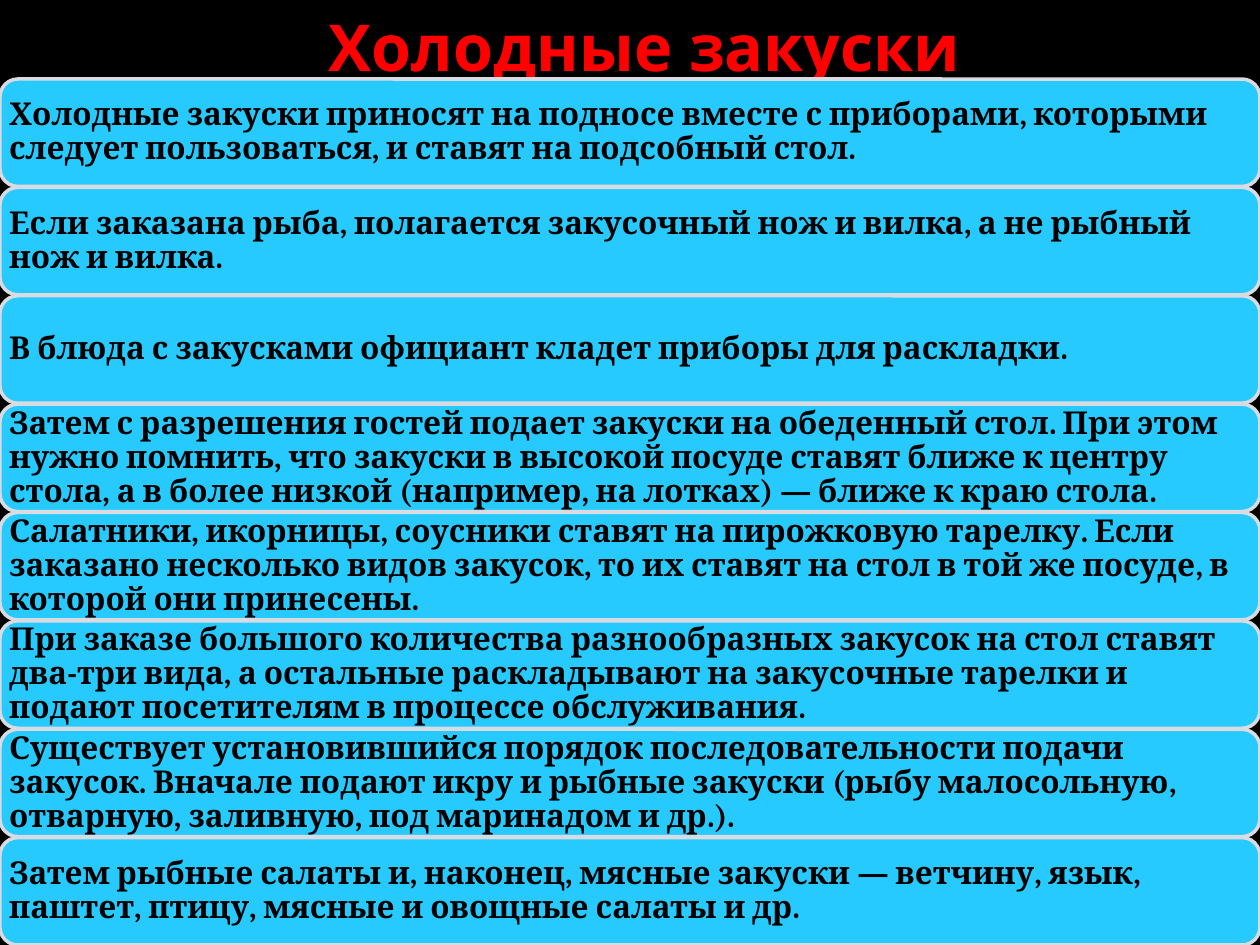
from pptx import Presentation
from pptx.dml.color import RGBColor
from pptx.enum.shapes import MSO_SHAPE as Shape
from pptx.enum.text import MSO_ANCHOR as Anchor, PP_ALIGN as Align
from pptx.util import Emu, Pt

SCALE = 914400 / 126
WIDTH, HEIGHT = 1260, 945
COLORS = {"back": "000000", "title": "FF0000", "row": "26CAFE",
          "edge": "D8DBE2", "text": "000000"}
RULES = [
    "Холодные закуски приносят на подносе вместе с приборами, которыми следует "
    "пользоваться, и ставят на подсобный стол.",
    "Если заказана рыба, полагается закусочный нож и вилка, а не рыбный нож и вилка.",
    "В блюда с закусками официант кладет приборы для раскладки.",
    "Затем с разрешения гостей подает закуски на обеденный стол. При этом нужно "
    "помнить, что закуски в высокой посуде ставят ближе к центру стола, а в более "
    "низкой (например, на лотках) — ближе к краю стола.",
    "Салатники, икорницы, соусники ставят на пирожковую тарелку. Если заказано "
    "несколько видов закусок, то их ставят на стол в той же посуде, в которой они "
    "принесены.",
    "При заказе большого количества разнообразных закусок на стол ставят два-три "
    "вида, а остальные раскладывают на закусочные тарелки и подают посетителям в "
    "процессе обслуживания.",
    "Существует установившийся порядок последовательности подачи закусок. Вначале "
    "подают икру и рыбные закуски (рыбу малосольную, отварную, заливную, под "
    "маринадом и др.).",
    "Затем рыбные салаты и, наконец, мясные закуски — ветчину, язык, паштет, птицу, "
    "мясные и овощные салаты и др.",
]


def px(length):
    """Turn pixels into EMU."""
    return Emu(round(length * SCALE))


def color(name):
    """Look up a named colour."""
    return RGBColor.from_string(COLORS[name])


def write(box, text, font, size, ink, align, inset):
    """Put one bold, vertically centred paragraph into a box."""
    frame = box.text_frame
    frame.word_wrap = True
    frame.vertical_anchor = Anchor.MIDDLE
    frame.margin_left = frame.margin_right = px(inset)
    frame.margin_top = frame.margin_bottom = px(inset)
    para = frame.paragraphs[0]
    para.alignment = align
    span = para.add_run()
    span.text = text
    span.font.name, span.font.size, span.font.bold = font, Pt(size), True
    span.font.color.rgb = color(ink)
    return para


def add_title(page, left, top, width, height):
    """Place the heading."""
    box = page.shapes.add_textbox(px(left), px(top), px(width), px(height))
    write(box, "Холодные закуски", "Noto Sans", 36.9, "title", Align.CENTER, 6)


def add_rules(page, left, top, width, height, gap=1):
    """Stack one rounded bar per rule with equal gaps."""
    pitch = (height + gap) / len(RULES)
    for index, rule in enumerate(RULES):
        bar = page.shapes.add_shape(Shape.ROUNDED_RECTANGLE, px(left),
                                    px(top + index * pitch), px(width), px(pitch - gap))
        bar.shadow.inherit = False
        bar.fill.solid()
        bar.fill.fore_color.rgb = color("row")
        bar.line.color.rgb = color("edge")
        bar.line.width = Pt(2)
        para = write(bar, rule, "Cambria", 18, "text", Align.LEFT, 4)
        para.line_spacing = 0.9


def main():
    """Build and save the deck."""
    deck = Presentation()
    deck.slide_width, deck.slide_height = px(WIDTH), px(HEIGHT)
    page = deck.slides.add_slide(deck.slide_layouts[6])
    page.background.fill.solid()
    page.background.fill.fore_color.rgb = color("back")
    add_title(page, 78, 0, 1134, 91)
    add_rules(page, 0, 79, WIDTH, HEIGHT - 79)
    deck.save("out.pptx")


if __name__ == "__main__":
    main()
